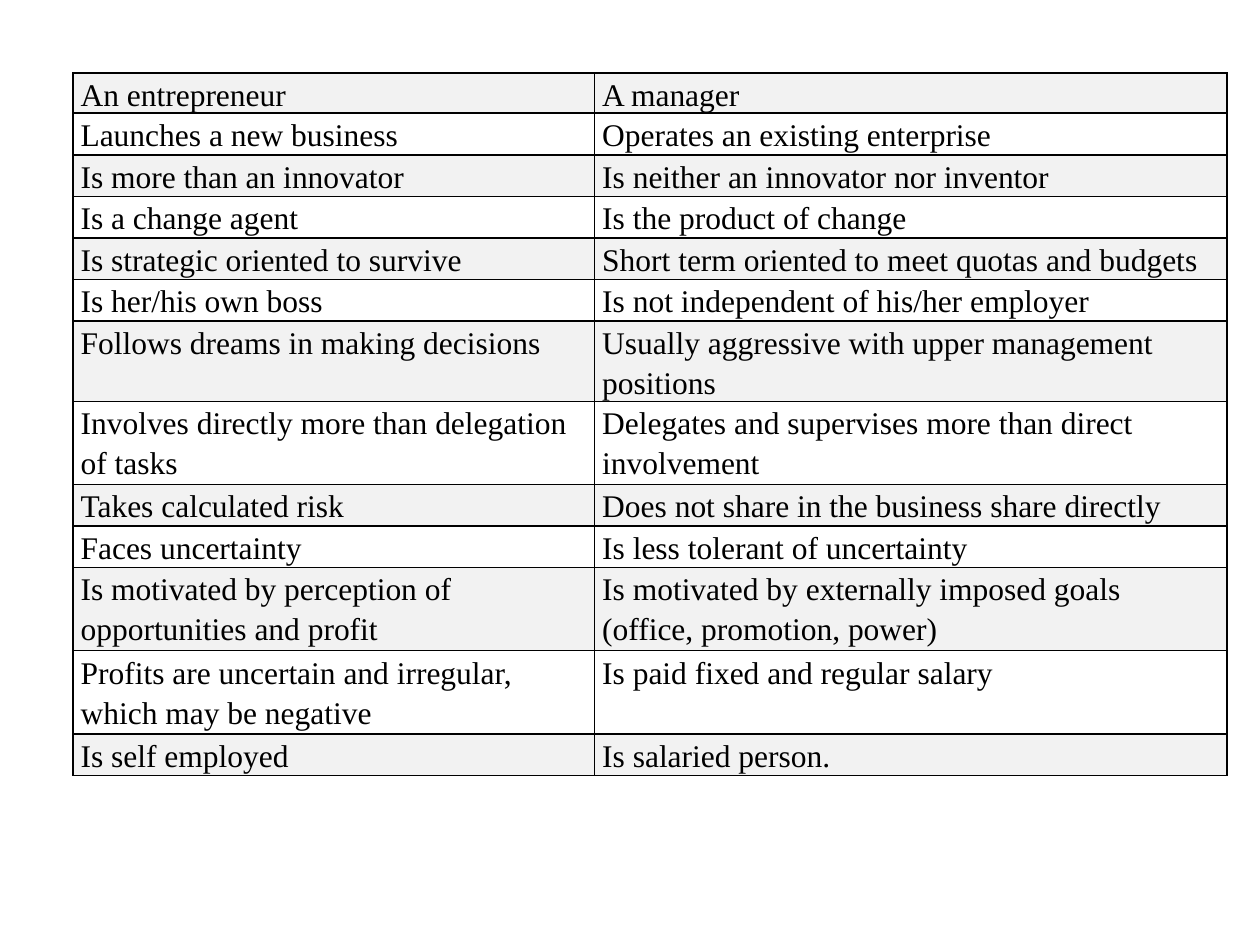
from lxml import etree
from pptx import Presentation
from pptx import util as u
from pptx.dml.color import RGBColor
from pptx.oxml import ns

BLACK = RGBColor(0x00, 0x00, 0x00)
BAND_GREY = RGBColor(0xF2, 0xF2, 0xF2)
FONT = "Times New Roman"

LINE_ROW = 0.33
COLUMN_WIDTHS = (4.14, 5.02)
MARGIN = 0.58

# Each row: minimum height in text lines, entrepreneur, manager
ROWS = [
    (0.5, "An entrepreneur", "A manager"),
    (1, "Launches a new business", "Operates an existing enterprise"),
    (1, "Is more than an innovator", "Is neither an innovator nor inventor"),
    (1, "Is a change agent", "Is the product of change"),
    (1, "Is strategic oriented to survive", "Short term oriented to meet quotas and budgets"),
    (1, "Is her/his own boss", "Is not independent of his/her employer"),
    (1.2, "Follows dreams in making decisions", "Usually aggressive with upper management positions"),
    (2, "Involves directly more than delegation of tasks", "Delegates and supervises more than direct involvement"),
    (1, "Takes calculated risk", "Does not share in the business share directly"),
    (1, "Faces uncertainty", "Is less tolerant of uncertainty"),
    (2, "Is motivated by perception of opportunities and profit",
     "Is motivated by externally imposed goals (office, promotion, power)"),
    (2, "Profits are uncertain and irregular, which may be negative", "Is paid fixed and regular salary"),
    (1, "Is self employed", "Is salaried person."),
]


def write_text(cell, content, *, size=18, color=BLACK, line_spacing=1.15, space_after=10):
    cell.margin_left = cell.margin_right = u.Inches(0.06)
    cell.margin_top = cell.margin_bottom = 0
    paragraph = cell.text_frame.paragraphs[0]
    paragraph.line_spacing = line_spacing
    paragraph.space_after = u.Pt(space_after)
    run = paragraph.add_run()
    run.text = content
    run.font.name = FONT
    run.font.size = u.Pt(size)
    run.font.bold = False
    run.font.color.rgb = color


def draw_borders(cell, color=BLACK, width=1):
    properties = cell._tc.get_or_add_tcPr()
    for side in ("lnL", "lnR", "lnT", "lnB"):
        line = etree.SubElement(properties, ns.qn(f"a:{side}"), w=str(u.Pt(width)))
        fill = etree.SubElement(line, ns.qn("a:solidFill"))
        etree.SubElement(fill, ns.qn("a:srgbClr"), val=str(color))


presentation = Presentation()
presentation.slide_width = u.Inches(10)
presentation.slide_height = u.Inches(7.5)
slide = presentation.slides.add_slide(presentation.slide_layouts[6])

table_shape = slide.shapes.add_table(
    len(ROWS), len(COLUMN_WIDTHS), u.Inches(MARGIN), u.Inches(MARGIN),
    u.Inches(sum(COLUMN_WIDTHS)), u.Inches(5.87))
table = table_shape.table
table.first_row = False
table.horz_banding = False

for column, width in zip(table.columns, COLUMN_WIDTHS):
    column.width = u.Inches(width)

for row_index, (lines, *contents) in enumerate(ROWS):
    row = table.rows[row_index]
    row.height = u.Inches(LINE_ROW * lines)
    for cell, content in zip(row.cells, contents):
        write_text(cell, content)
        draw_borders(cell)
        if row_index % 2 == 0:
            cell.fill.solid()
            cell.fill.fore_color.rgb = BAND_GREY
        else:
            cell.fill.background()

table_shape.height = u.Inches(5.87)

presentation.save("out.pptx")
